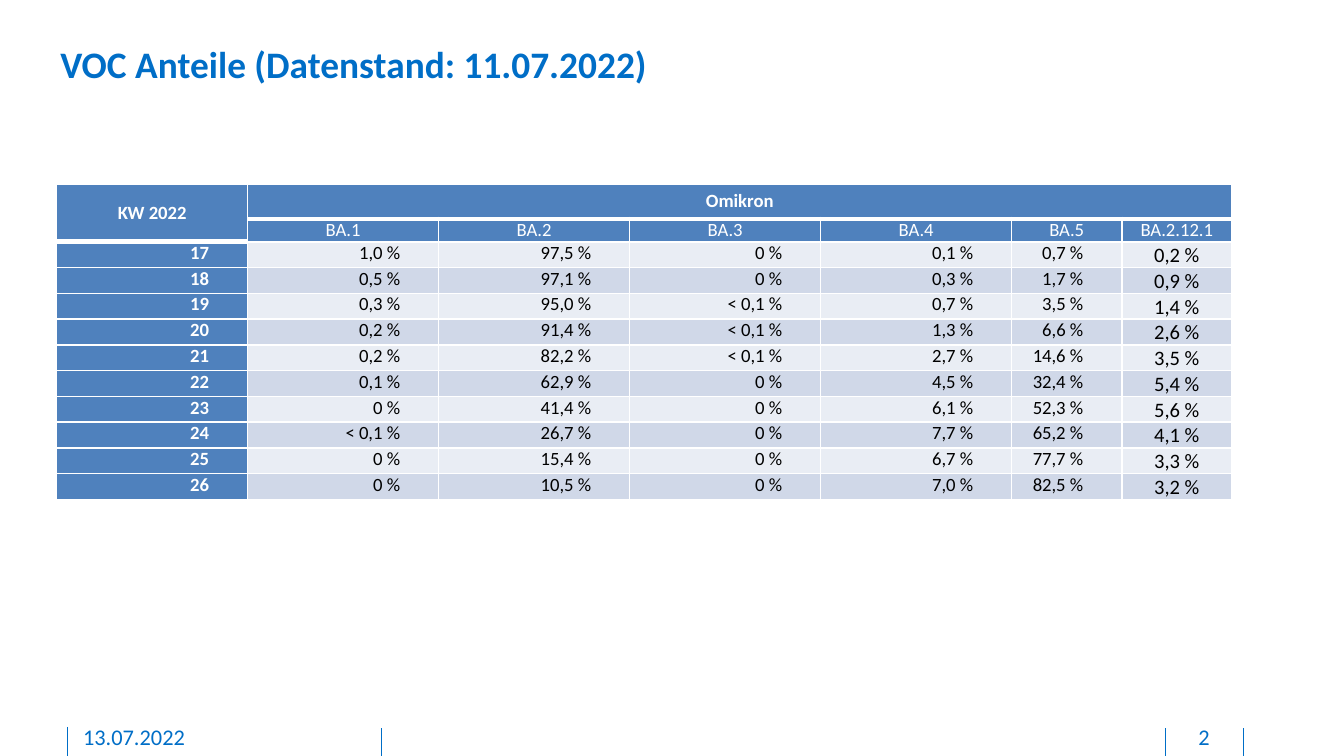
from lxml import etree
from pptx import Presentation
from pptx.dml.color import RGBColor
from pptx.enum.shapes import MSO_CONNECTOR
from pptx.enum.text import MSO_ANCHOR, MSO_AUTO_SIZE, PP_ALIGN
from pptx.oxml.ns import qn
from pptx.util import Cm, Pt

LEFT, CENTER, RIGHT = PP_ALIGN.LEFT, PP_ALIGN.CENTER, PP_ALIGN.RIGHT
TOP, MIDDLE, BOTTOM = MSO_ANCHOR.TOP, MSO_ANCHOR.MIDDLE, MSO_ANCHOR.BOTTOM
STRAIGHT = MSO_CONNECTOR.STRAIGHT
GROW = MSO_AUTO_SIZE.SHAPE_TO_FIT_TEXT

BLUE, HEADER, WHITE, BLACK = "006EC7", "4F81BD", "FFFFFF", "000000"
BANDS = ("E9EDF4", "D0D8E8")
FONT = "Calibri"

VARIANTS = ["BA.1", "BA.2", "BA.3", "BA.4", "BA.5", "BA.2.12.1"]
FIRST_WEEK = 17
SHARES = [
    ["1,0 %", "97,5 %", "0 %", "0,1 %", "0,7 %", "0,2 %"],
    ["0,5 %", "97,1 %", "0 %", "0,3 %", "1,7 %", "0,9 %"],
    ["0,3 %", "95,0 %", "< 0,1 %", "0,7 %", "3,5 %", "1,4 %"],
    ["0,2 %", "91,4 %", "< 0,1 %", "1,3 %", "6,6 %", "2,6 %"],
    ["0,2 %", "82,2 %", "< 0,1 %", "2,7 %", "14,6 %", "3,5 %"],
    ["0,1 %", "62,9 %", "0 %", "4,5 %", "32,4 %", "5,4 %"],
    ["0 %", "41,4 %", "0 %", "6,1 %", "52,3 %", "5,6 %"],
    ["< 0,1 %", "26,7 %", "0 %", "7,7 %", "65,2 %", "4,1 %"],
    ["0 %", "15,4 %", "0 %", "6,7 %", "77,7 %", "3,3 %"],
    ["0 %", "10,5 %", "0 %", "7,0 %", "82,5 %", "3,2 %"],
]
COLUMN_WIDTHS = [3.61] * 5 + [2.08] * 2
ROW_HEIGHTS = [0.66] + [0.43] * (len(SHARES) + 1)
LAST = len(VARIANTS)

# Cell margins and anchors
HEAD_CELL = {"margin_left": Cm(0.13), "margin_right": Cm(0.13), "margin_top": 0,
             "margin_bottom": 0, "vertical_anchor": MIDDLE}
BODY_CELL = {**HEAD_CELL, "vertical_anchor": TOP}
LAST_CELL = {"margin_left": Cm(0.02), "margin_right": Cm(0.02), "margin_top": Cm(0.02),
             "margin_bottom": 0, "vertical_anchor": BOTTOM}


def rgb(value):
    return RGBColor.from_string(value)


def set_all(target, values):
    for name, value in values.items():
        setattr(target, name, value)


def write(frame, text, size, color, bold=False, align=LEFT):
    paragraph = frame.paragraphs[0]
    paragraph.alignment = align
    run = paragraph.add_run()
    run.text = text
    set_all(run.font, {"name": FONT, "size": Pt(size), "bold": bold})
    run.font.color.rgb = rgb(color)
    return paragraph


def add_text(slide, box, text, size, frame_format, **style):
    frame = slide.shapes.add_textbox(*map(Cm, box)).text_frame
    set_all(frame, frame_format)
    write(frame, text, size, BLUE, **style)


def add_divider(slide, x, top, bottom):
    divider = slide.shapes.add_connector(STRAIGHT, Cm(x), Cm(top), Cm(x), Cm(bottom))
    divider.line.color.rgb = rgb(BLUE)
    divider.line.width = Pt(0.5)
    etree.SubElement(divider._element.spPr, qn("a:effectLst"))


def has_thick_bottom(row, column):
    return row == 0 or (row, column) == (1, 0)


def add_borders(cell, row, column):
    thick_top = row > 0 and has_thick_bottom(row - 1, column)
    widths = {"L": 1, "R": 1, "T": 3 if thick_top else 1,
              "B": 3 if has_thick_bottom(row, column) else 1}
    properties = cell._tc.get_or_add_tcPr()
    for side, width in widths.items():
        border = etree.SubElement(properties, qn(f"a:ln{side}"), w=str(Pt(width)))
        fill = etree.SubElement(border, qn("a:solidFill"))
        etree.SubElement(fill, qn("a:srgbClr"), val=WHITE)


def fill_cell(cell, text, cell_format, size=10, color=WHITE, bold=False, align=CENTER):
    set_all(cell, cell_format)
    paragraph = write(cell.text_frame, text, size, color, bold, align)
    if align == RIGHT:
        paragraph._p.get_or_add_pPr().set("marR", str(Cm(0.6)))


def add_share_table(slide):
    table = slide.shapes.add_table(
        len(ROW_HEIGHTS), len(COLUMN_WIDTHS), Cm(1.07), Cm(3.48),
        Cm(sum(COLUMN_WIDTHS)), Cm(sum(ROW_HEIGHTS))).table
    set_all(table, {"first_row": False, "horz_banding": False})
    for column, width in zip(table.columns, COLUMN_WIDTHS):
        column.width = Cm(width)
    for row, height in zip(table.rows, ROW_HEIGHTS):
        row.height = Cm(height)

    # Borders and fills
    for r in range(len(ROW_HEIGHTS)):
        for c in range(len(COLUMN_WIDTHS)):
            cell = table.cell(r, c)
            add_borders(cell, r, c)
            cell.fill.solid()
            cell.fill.fore_color.rgb = rgb(HEADER if r < 2 or c == 0 else BANDS[r % 2])

    # Header rows
    table.cell(0, 0).merge(table.cell(1, 0))
    table.cell(0, 1).merge(table.cell(0, LAST))
    fill_cell(table.cell(0, 0), "KW 2022", HEAD_CELL, bold=True)
    fill_cell(table.cell(0, 1), "Omikron", HEAD_CELL, bold=True)
    for c, variant in enumerate(VARIANTS, 1):
        fill_cell(table.cell(1, c), variant, HEAD_CELL if c < 3 else BODY_CELL)

    # One row per calendar week
    for r, shares in enumerate(SHARES, 2):
        week = str(FIRST_WEEK + r - 2)
        fill_cell(table.cell(r, 0), week, BODY_CELL, bold=True, align=RIGHT)
        for c, share in enumerate(shares, 1):
            if c == LAST:
                fill_cell(table.cell(r, c), share, LAST_CELL, size=11, color=BLACK)
            else:
                fill_cell(table.cell(r, c), share, BODY_CELL, color=BLACK, align=RIGHT)


def main():
    deck = Presentation()
    set_all(deck, {"slide_width": Cm(25.4), "slide_height": Cm(14.29)})
    slide = deck.slides.add_slide(deck.slide_layouts[6])

    # Footer dividers
    for x, top, bottom in [(22.02, 13.77, 14.35), (7.21, 13.77, 14.33),
                           (1.27, 13.74, 14.3), (23.5, 13.77, 14.35)]:
        add_divider(slide, x, top, bottom)

    # Title
    add_text(slide, (0.89, 0.66, 11.68, 1.12), "VOC Anteile (Datenstand: 11.07.2022)",
             20, {"word_wrap": False, "auto_size": GROW}, bold=True)

    # Footer date and page number
    footer = {"word_wrap": True, "margin_left": 0, "margin_right": 0,
              "margin_top": 0, "margin_bottom": Cm(0.13)}
    add_text(slide, (1.57, 13.67, 5.16, 0.53), "13.07.2022", 12, footer)
    add_text(slide, (22.07, 13.67, 1.37, 0.53), "2", 12, footer, align=CENTER)

    add_share_table(slide)
    deck.save("out.pptx")


if __name__ == "__main__":
    main()
